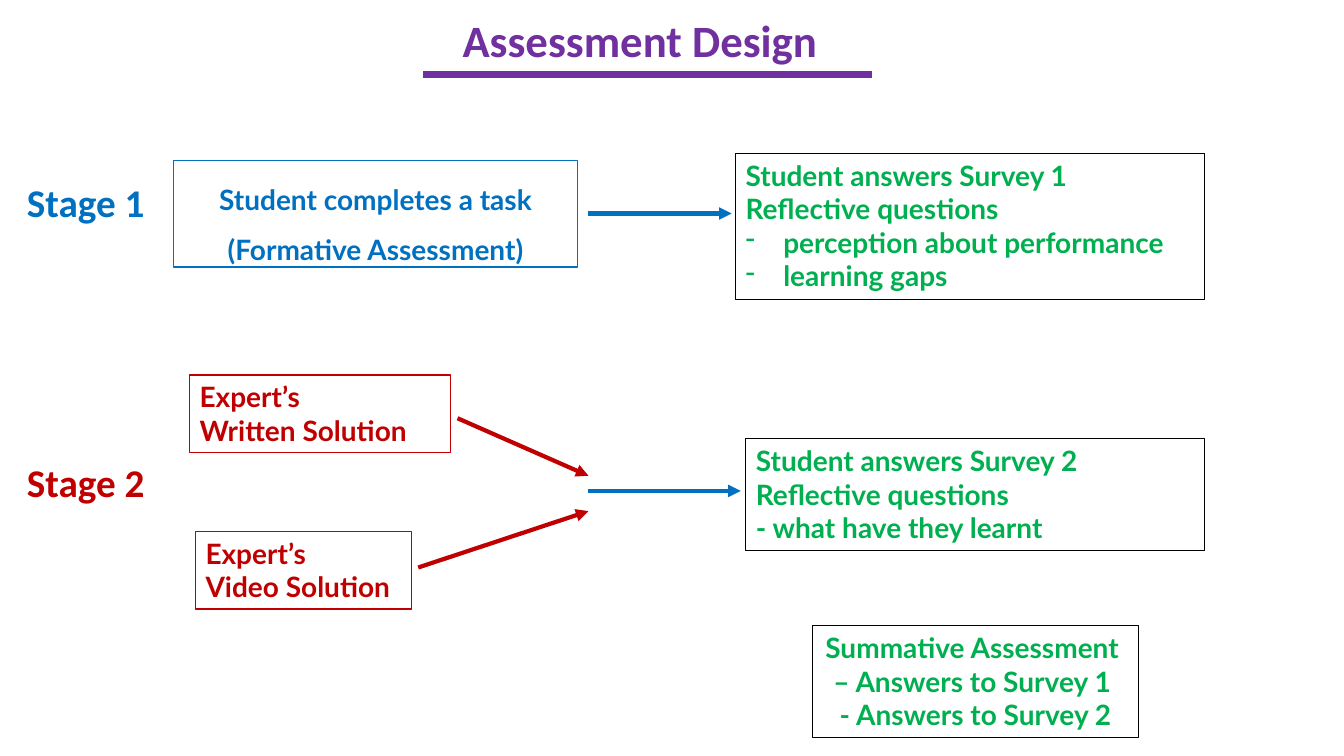
from lxml.etree import SubElement
from pptx import Presentation
from pptx.dml.color import RGBColor
from pptx.enum.shapes import MSO_CONNECTOR, MSO_SHAPE
from pptx.enum.text import MSO_ANCHOR, PP_ALIGN
from pptx.oxml.ns import qn
from pptx.util import Cm, Pt

PURPLE = RGBColor(0x70, 0x30, 0xA0)
BLUE = RGBColor(0x00, 0x70, 0xC0)
RED = RGBColor(0xC0, 0x00, 0x00)
GREEN = RGBColor(0x00, 0xB0, 0x50)
BLACK = RGBColor(0x00, 0x00, 0x00)


def add_text(p, text, font, size, color):
    """Fill a paragraph, turning each newline into a line break."""
    for i, line in enumerate(text.split("\n")):
        if i:
            p.add_line_break()
        r = p.add_run()
        r.text = line
        r.font.name = font
        r.font.size = Pt(size)
        r.font.bold = True
        r.font.color.rgb = color


def add_box(slide, x, y, w, h, paragraphs, color, line_color, line_width=1,
            align=PP_ALIGN.LEFT, spacing=None):
    sp = slide.shapes.add_shape(MSO_SHAPE.RECTANGLE, Cm(x), Cm(y), Cm(w), Cm(h))
    sp.shadow.inherit = False
    sp.fill.background()
    sp.line.color.rgb = line_color
    sp.line.width = Pt(line_width)
    tf = sp.text_frame
    tf.word_wrap = True
    tf.vertical_anchor = MSO_ANCHOR.TOP
    for i, text in enumerate(paragraphs):
        p = tf.add_paragraph() if i else tf.paragraphs[0]
        p.alignment = align
        p.line_spacing = spacing
        add_text(p, text, "Lato", 20, color)
    return sp


def add_dash(p):
    """Give a paragraph a hanging dash bullet."""
    pPr = p._p.get_or_add_pPr()
    pPr.set("marL", str(Cm(0.95)))
    pPr.set("indent", str(-Cm(0.95)))
    SubElement(pPr, qn("a:buFontTx"))
    SubElement(pPr, qn("a:buChar")).set("char", "-")


def add_line(slide, x1, y1, x2, y2, color, width=3, arrow=True):
    cx = slide.shapes.add_connector(MSO_CONNECTOR.STRAIGHT,
                                    Cm(x1), Cm(y1), Cm(x2), Cm(y2))
    cx.line.color.rgb = color
    cx.line.width = Pt(width)
    if arrow:
        SubElement(cx.line._get_or_add_ln(), qn("a:tailEnd")).set("type", "triangle")
    SubElement(cx._element.spPr, qn("a:effectLst"))


def add_stage_label(slide, x, y, text, color):
    tb = slide.shapes.add_textbox(Cm(x), Cm(y), Cm(3.63), Cm(1.45))
    tf = tb.text_frame
    tf.word_wrap = True
    add_text(tf.paragraphs[0], text, "Calibri", 28, color)


def add_title(slide, x, y, w, h):
    title = slide.shapes.title
    title.left, title.top, title.width, title.height = Cm(x), Cm(y), Cm(w), Cm(h)
    tf = title.text_frame
    tf.vertical_anchor = MSO_ANCHOR.MIDDLE
    p = tf.paragraphs[0]
    p.alignment = PP_ALIGN.CENTER
    add_text(p, "Assessment Design", "Calibri", 32, PURPLE)
    underline_y = y + h + 0.13
    add_line(slide, x - 0.15, underline_y, x + w + 0.53, underline_y,
             PURPLE, 4.5, arrow=False)


def add_stage_1(slide, x, y):
    add_stage_label(slide, x, y + 0.51, "Stage 1", BLUE)
    add_box(slide, x + 3.94, y + 0.18, 10.19, 2.69,
            ["Student completes a task\n(Formative Assessment)"],
            BLUE, BLUE, align=PP_ALIGN.CENTER, spacing=1.5)
    add_line(slide, x + 14.4, y + 1.52, x + 18.01, y + 1.52, BLUE)
    survey = add_box(slide, x + 18.11, y, 11.81, 3.68,
                     ["Student answers Survey 1\nReflective questions",
                      "perception about performance", "learning gaps"],
                     GREEN, BLACK, 0.75)
    for p in survey.text_frame.paragraphs[1:]:
        add_dash(p)


def add_stage_2(slide, x, y):
    add_stage_label(slide, x, y + 1.98, "Stage 2", RED)
    add_box(slide, x + 4.35, y, 6.58, 1.96,
            ["Expert’s", "Written Solution"], RED, RED)
    add_line(slide, x + 11.1, y + 1.09, x + 14.4, y + 2.54, RED)
    add_box(slide, x + 4.5, y + 3.94, 5.44, 1.96,
            ["Expert’s", "Video Solution"], RED, RED)
    add_line(slide, x + 10.11, y + 4.85, x + 14.4, y + 3.43, RED)
    add_line(slide, x + 14.4, y + 2.92, x + 18.24, y + 2.92, BLUE)
    add_box(slide, x + 18.37, y + 1.6, 11.56, 2.82,
            ["Student answers Survey 2\nReflective questions",
             "- what have they learnt"], GREEN, BLACK, 0.75)


def add_summative(slide, x, y):
    add_box(slide, x, y, 8.23, 2.82,
            ["Summative Assessment ", "– Answers to Survey 1 ",
             "- Answers to Survey 2"], GREEN, BLACK, align=PP_ALIGN.CENTER)


def main():
    prs = Presentation()
    prs.slide_width, prs.slide_height = Cm(33.87), Cm(19.05)
    slide = prs.slides.add_slide(prs.slide_layouts[5])
    add_title(slide, 10.82, 0.23, 10.62, 1.52)
    add_stage_1(slide, 0.43, 3.86)
    add_stage_2(slide, 0.43, 9.45)
    add_summative(slide, 20.47, 15.77)
    prs.save("out.pptx")


if __name__ == "__main__":
    main()
